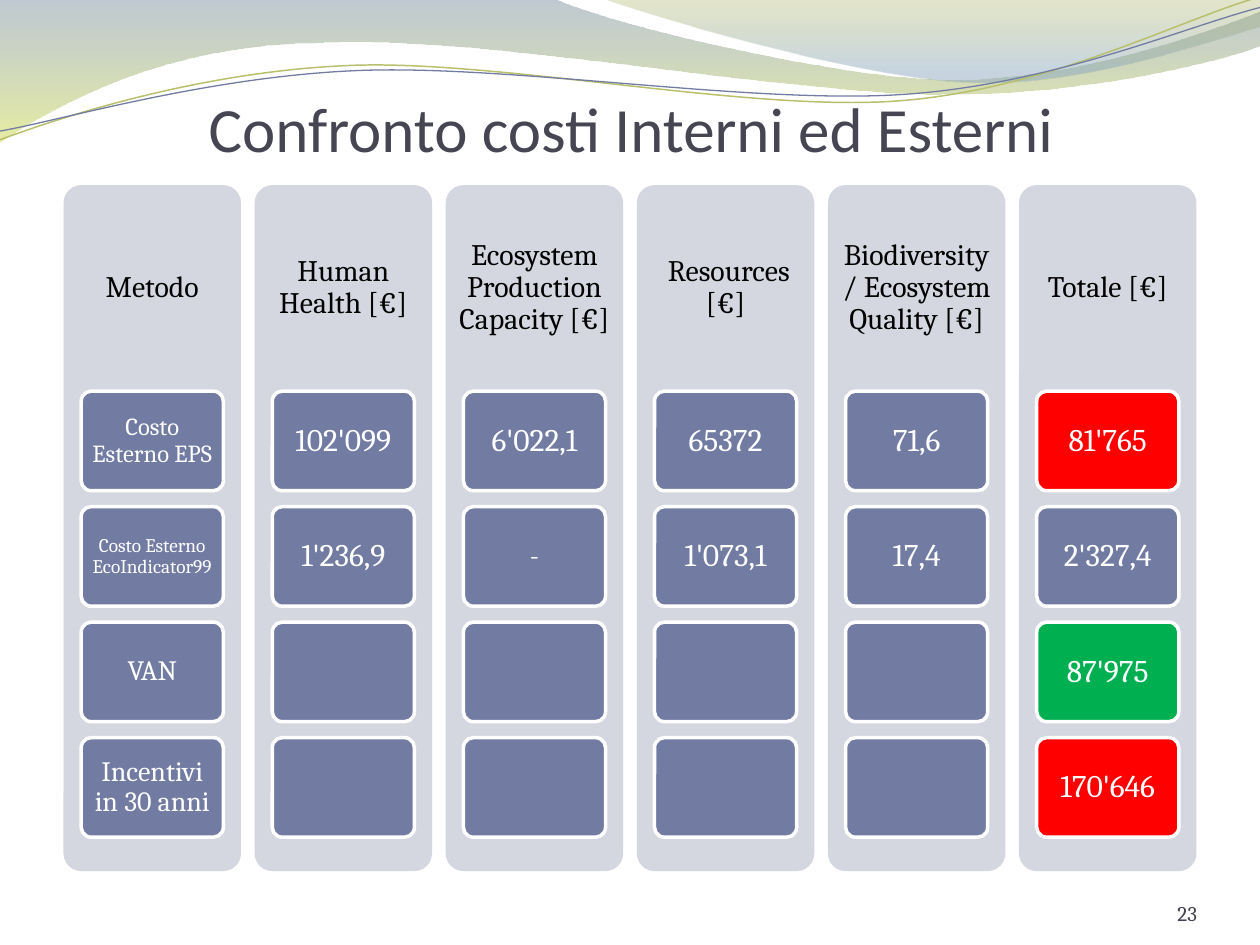
from lxml import etree
from pptx import Presentation
from pptx.dml.color import RGBColor
from pptx.enum.shapes import MSO_SHAPE
from pptx.enum.text import MSO_ANCHOR, PP_ALIGN
from pptx.oxml.ns import qn
from pptx.util import Pt

ROUNDED = MSO_SHAPE.ROUNDED_RECTANGLE
CENTER, RIGHT = PP_ALIGN.CENTER, PP_ALIGN.RIGHT
MIDDLE, BOTTOM = MSO_ANCHOR.MIDDLE, MSO_ANCHOR.BOTTOM

SLATE, RED, GREEN, WHITE = "727CA3", "FF0000", "00B050", "FFFFFF"
COLUMN_LEFT, COLUMN_TOP, COLUMN_PITCH = 36.3, 105.8, 109.2
COLUMN_WIDTH, COLUMN_HEIGHT, HEADER_HEIGHT = 101.4, 392, 117.7
CELL_TOP, CELL_PITCH, CELL_WIDTH, CELL_HEIGHT = 223.5, 66, 81.2, 56.9
CELL_INDENT = (COLUMN_WIDTH - CELL_WIDTH) / 2

COSTS = [
    ("Metodo", ["Costo Esterno EPS", "Costo Esterno EcoIndicator99", "VAN",
                "Incentivi in 30 anni"]),
    ("Human Health [€]", ["102'099", "1'236,9", "", ""]),
    ("Ecosystem Production Capacity [€]", ["6'022,1", "-", "", ""]),
    (" Resources [€]", ["65372", "1'073,1", "", ""]),
    ("Biodiversity / Ecosystem Quality [€]", ["71,6", "17,4", "", ""]),
    ("Totale [€]", ["81'765", "2'327,4", "87'975", "170'646"]),
]
LABEL_SIZES = {"Costo Esterno EPS": 14, "Costo Esterno EcoIndicator99": 11,
               "VAN": 16, "Incentivi in 30 anni": 16, "-": 16}
TOTAL_FILLS = [RED, SLATE, GREEN, RED]

# Waves: a start point, then line segments (2 numbers) or Bézier curves (6 numbers)
LEFT_WAVE = [
    (0, -0.7), (316.8, -0.7),
    (342.7, 12.2, 478.1, 45.4, 545.8, 45.4), (614.2, 45.4, 689.8, 18.7, 720, 6.5),
    (720.7, 25.9),
    (707.8, 31.7, 626.4, 54.7, 537.1, 54), (447.8, 54, 275, 20.2, 185, 24.5),
    (92.9, 25.2, 33.1, 59.8, -0.7, 81.4),
]
RIGHT_WAVE = [
    (344.9, -0.7),
    (366.5, 7.9, 491, 44.6, 553.7, 46.8), (616.3, 49.7, 691.9, 23, 720, 15.1),
    (720, 0),
]
# Strands are given level and tilted afterwards
STRAND_TILT = 357.3
GREEN_STRAND = [
    (-1.4, 62.9), (33.8, 51.7, 114.1, 29.4, 199.8, 29.9),
    (284.9, 30.3, 425.8, 67.3, 512.4, 64.9), (599, 62.4, 676.5, 25.7, 720.2, 15.6),
]
BLUE_STRAND = [
    (-1.1, 57.9), (32.9, 53.7, 118.3, 32.5, 204.1, 33),
    (290.6, 33.4, 428.9, 63.1, 515.5, 61.3), (602, 59.6, 678.4, 30.1, 721.4, 21.3),
]


def color(hex_value):
    return RGBColor.from_string(hex_value)


def add_outline(slide, outline, close):
    """Build a freeform, then merge the three points of each curve into a Bézier."""
    points = [(Pt(segment[i]), Pt(segment[i + 1]))
              for segment in outline for i in range(0, len(segment), 2)]
    builder = slide.shapes.build_freeform(*points[0])
    builder.add_line_segments(points[1:], close=close)
    shape = builder.convert_to_shape()
    shape.shadow.inherit = False
    steps = iter(list(shape._element.spPr.iter(qn("a:lnTo"))))
    for segment in outline[1:]:
        first = next(steps)
        if len(segment) == 6:
            first.tag = qn("a:cubicBezTo")
            for _ in range(2):
                step = next(steps)
                first.append(step[0])
                step.getparent().remove(step)
    return shape


def add_wave(slide, outline, stops):
    """Draw a filled wave; stops are (position, colour, opacity in percent)."""
    wave = add_outline(slide, outline, True)
    wave.line.fill.background()
    wave.fill.gradient()
    wave.fill.gradient_angle = 270
    for stop, (position, hex_value, _) in zip(wave.fill.gradient_stops, stops):
        stop.position = position
        stop.color.rgb = color(hex_value)
    shades = list(wave._element.spPr.iter(qn("a:srgbClr")))
    for shade, (_, _, opacity) in zip(shades, stops):
        etree.SubElement(shade, qn("a:alpha"), val=str(opacity * 1000))


def add_strand(slide, outline, hex_value, width):
    strand = add_outline(slide, outline, False)
    strand.rotation = STRAND_TILT
    strand.fill.background()
    strand.line.color.rgb = color(hex_value)
    strand.line.width = Pt(width)


def write(shape, text, size, hex_value, font="Cambria", align=CENTER,
          anchor=MIDDLE, insets=(0, 0, 0, 0), spacing=None):
    """Fill a shape with one paragraph; apostrophes are set in Calibri."""
    frame = shape.text_frame
    frame.word_wrap = True
    frame.vertical_anchor = anchor
    (frame.margin_left, frame.margin_top,
     frame.margin_right, frame.margin_bottom) = map(Pt, insets)
    paragraph = frame.paragraphs[0]
    paragraph.alignment = align
    paragraph.line_spacing = spacing
    before, mark, after = text.partition("'")
    for part, part_font in ((before, font), (mark, "Calibri"), (after, font)):
        if part:
            run = paragraph.add_run()
            run.text = part
            run.font.name = part_font
            run.font.size = Pt(size)
            run.font.color.rgb = color(hex_value)


def add_text(slide, box, *content, **layout):
    write(slide.shapes.add_textbox(*map(Pt, box)), *content, **layout)


def add_panel(slide, box, fill):
    panel = slide.shapes.add_shape(ROUNDED, *map(Pt, box))
    panel.adjustments[0] = 0.1
    panel.shadow.inherit = False
    panel.fill.solid()
    panel.fill.fore_color.rgb = color(fill)
    panel.line.fill.background()
    return panel


def add_cell(slide, left, top, value, fill):
    cell = add_panel(slide, (left, top, CELL_WIDTH, CELL_HEIGHT), fill)
    cell.line.color.rgb = color(WHITE)
    cell.line.width = Pt(2)
    if value:
        size = LABEL_SIZES.get(value, 18)
        side, edge = size * 0.2, size * 0.15
        write(cell, value, size, WHITE, insets=(side, edge, side, edge), spacing=0.9)


def add_column(slide, left, header, values, fills):
    add_panel(slide, (left, COLUMN_TOP, COLUMN_WIDTH, COLUMN_HEIGHT), "D5D7E0")
    add_text(slide, (left, COLUMN_TOP, COLUMN_WIDTH, HEADER_HEIGHT), header, 17,
             "000000", insets=(5, 5, 5, 5), spacing=0.9)
    for row, (value, fill) in enumerate(zip(values, fills)):
        add_cell(slide, left + CELL_INDENT, CELL_TOP + row * CELL_PITCH, value, fill)


def main():
    deck = Presentation()
    deck.slide_width, deck.slide_height = Pt(720), Pt(540)
    slide = deck.slides.add_slide(deck.slide_layouts[6])

    add_wave(slide, LEFT_WAVE, [(0, "72889B", 45), (1, "D3DE57", 55)])
    add_wave(slide, RIGHT_WAVE, [(0, "A4AC50", 30), (0.8, "84A3BD", 45)])
    add_strand(slide, GREEN_STRAND, "B9C06C", 0.85)
    add_strand(slide, BLUE_STRAND, SLATE, 0.75)

    add_text(slide, (36.5, 49, 648, 45.4), "Confronto costi Interni ed Esterni", 36,
             "464653", font="Calibri", anchor=BOTTOM, insets=(0, 3.6, 0, 0))
    for index, (header, values) in enumerate(COSTS):
        fills = TOTAL_FILLS if header.startswith("Totale") else [SLATE] * len(values)
        add_column(slide, COLUMN_LEFT + index * COLUMN_PITCH, header, values, fills)
    add_text(slide, (624, 500.4, 60, 28.8), "23", 12, "43434F", align=RIGHT,
             anchor=BOTTOM)

    deck.save("out.pptx")


if __name__ == "__main__":
    main()
